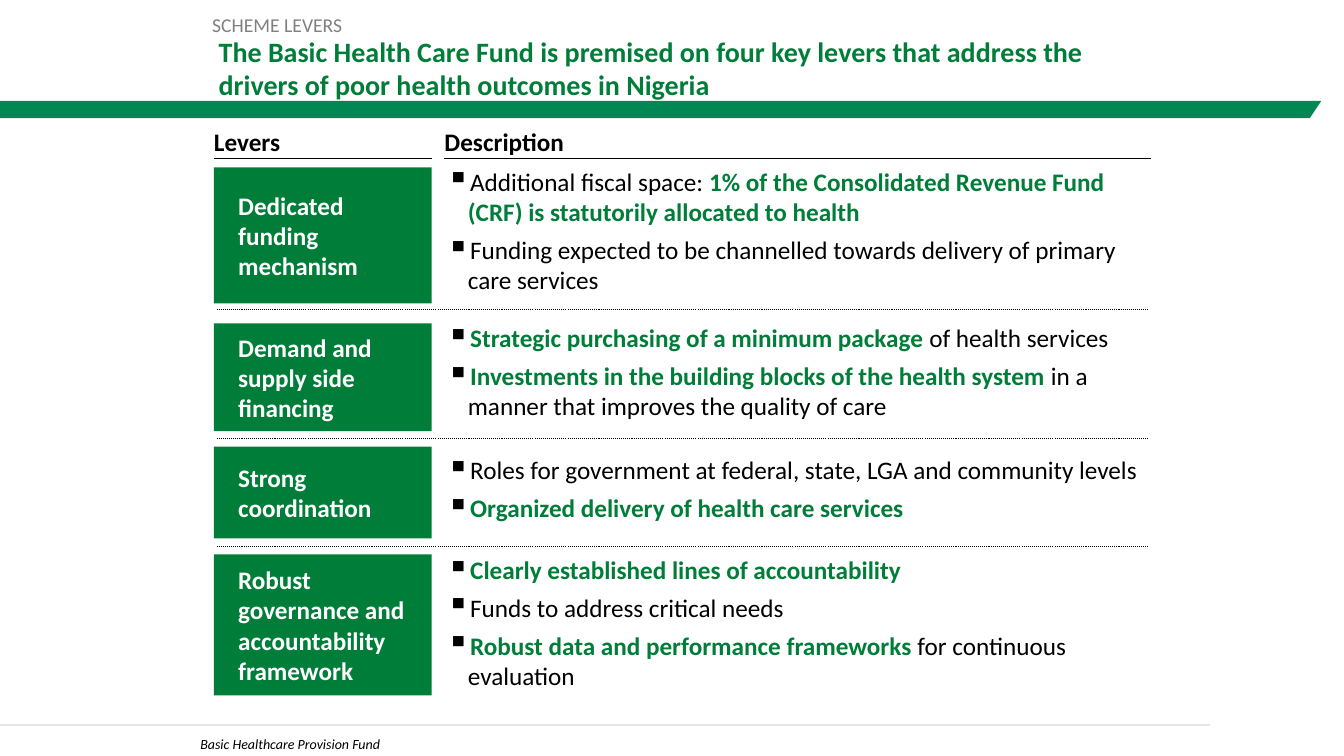
from pptx import Presentation
from pptx import util as u
from pptx.dml import color as dml_color
from pptx.enum import dml, shapes, text
from pptx.oxml import xmlchemy

Pt = u.Pt
COLORS = {
    "band": "008753",
    "green": "007E39",
    "white": "FFFFFF",
    "black": "000000",
    "grey": "808080",
    "rule": "E5E5E5",
}
FONT = "Calibri"
NO_INSETS = (0, 0, 0, 0)
LEVER_LEFT, LEVER_WIDTH = 152.8, 155.6
DESCRIPTION_LEFT, DESCRIPTION_WIDTH = 317.5, 504.5
BULLETS_LEFT, BULLETS_WIDTH = 319, 502.5

# Each lever: (top, height), label lines, (top, height) of its bullets, bullets.
# A bullet is a list of (text, is_key_message) runs.
LEVERS = [
    ((119.5, 97.2), ["Dedicated", "funding", "mechanism"], (118.8, 93.6), [
        [("Additional fiscal space: ", False),
         ("1% of the Consolidated Revenue Fund (CRF) is statutorily allocated to health", True)],
        [("Funding expected to be channelled towards delivery of primary care services", False)],
    ]),
    ((231, 77), ["Demand and", "supply side", "financing"], (230.4, 72), [
        [("Strategic purchasing of a minimum package ", True), ("of health services", False)],
        [("Investments in the building blocks of the health system ", True),
         ("in a manner that improves the quality of care", False)],
    ]),
    ((319, 65.5), ["Strong", "coordination"], (324.7, 50.4), [
        [("Roles for government at federal, state, LGA and community levels", False)],
        [("Organized delivery of health care services", True)],
    ]),
    ((396, 100.8), ["Robust", "governance and", "accountability", "framework"], (396, 100), [
        [("Clearly established lines of accountability", True)],
        [("Funds to address critical needs", False)],
        [("Robust data and performance frameworks", True), (" for continuous evaluation", False)],
    ]),
]
SEPARATOR_TOPS = [221, 313.2, 390.2]


def rgb(name):
    return dml_color.RGBColor.from_string(COLORS[name])


def apply_format(target, values):
    for name, value in values.items():
        setattr(target, name, value)


def set_frame(frame, insets, anchor, wrap=True):
    left, top, right, bottom = insets
    apply_format(frame, {
        "margin_left": Pt(left), "margin_top": Pt(top),
        "margin_right": Pt(right), "margin_bottom": Pt(bottom),
        "vertical_anchor": anchor, "word_wrap": wrap,
    })


def add_run(paragraph, words, size, color, **style):
    run = paragraph.add_run()
    run.text = words
    apply_format(run.font, {"name": FONT, "size": Pt(size), **style})
    run.font.color.rgb = rgb(color)


def set_indent(paragraph, margin, first_line=0):
    properties = paragraph._p.get_or_add_pPr()
    properties.set("marL", str(Pt(margin)))
    properties.set("indent", str(Pt(first_line)))
    return properties


def add_bullet(paragraph):
    properties = set_indent(paragraph, 15.2, -15.2)
    bullet_color = xmlchemy.OxmlElement("a:buClr")
    black = xmlchemy.OxmlElement("a:srgbClr")
    black.set("val", COLORS["black"])
    bullet_color.append(black)
    bullet_size = xmlchemy.OxmlElement("a:buSzPct")
    bullet_size.set("val", "125000")
    bullet_character = xmlchemy.OxmlElement("a:buChar")
    bullet_character.set("char", "▪")
    for element in (bullet_color, bullet_size, bullet_character):
        properties.append(element)


def next_paragraph(frame, index):
    return frame.add_paragraph() if index else frame.paragraphs[0]


def add_text(slide, box, words, size, color, insets=NO_INSETS,
             anchor=text.MSO_ANCHOR.TOP, wrap=True, margin=0, **style):
    frame = slide.shapes.add_textbox(*map(Pt, box)).text_frame
    set_frame(frame, insets, anchor, wrap)
    paragraph = frame.paragraphs[0]
    set_indent(paragraph, margin)
    add_run(paragraph, words, size, color, **style)


def add_block(slide, kind, box, color):
    shape = slide.shapes.add_shape(kind, *map(Pt, box))
    shape.shadow.inherit = False
    shape.fill.solid()
    shape.fill.fore_color.rgb = rgb(color)
    shape.line.fill.background()
    return shape


def add_rule(slide, left, right, top, color="black", width=0.75, dash=None):
    line = slide.shapes.add_connector(
        shapes.MSO_CONNECTOR.STRAIGHT, Pt(left), Pt(top), Pt(right), Pt(top))
    line.line.color.rgb = rgb(color)
    apply_format(line.line, {"width": Pt(width), "dash_style": dash})
    line._element.spPr.append(xmlchemy.OxmlElement("a:effectLst"))


def add_heading(slide, left, width, words):
    add_text(slide, (left, 97, width, 14.5), words, 18, "black",
             anchor=text.MSO_ANCHOR.BOTTOM, bold=True)
    add_rule(slide, left, left + width, 113)


def add_lever(slide, top, height, lines):
    box = (LEVER_LEFT, top, LEVER_WIDTH, height)
    frame = add_block(slide, shapes.MSO_SHAPE.RECTANGLE, box, "green").text_frame
    set_frame(frame, (5.8,) * 4, text.MSO_ANCHOR.MIDDLE)
    for index, words in enumerate(lines):
        paragraph = next_paragraph(frame, index)
        paragraph.alignment = text.PP_ALIGN.LEFT
        set_indent(paragraph, 11.5)
        add_run(paragraph, words, 18, "white", bold=True)


def add_bullets(slide, top, height, bullets):
    box = (BULLETS_LEFT, top, BULLETS_WIDTH, height)
    frame = slide.shapes.add_textbox(*map(Pt, box)).text_frame
    set_frame(frame, NO_INSETS, text.MSO_ANCHOR.TOP)
    for index, runs in enumerate(bullets):
        paragraph = next_paragraph(frame, index)
        add_bullet(paragraph)
        if index:
            paragraph.space_before = Pt(5.4)
        for words, is_key in runs:
            add_run(paragraph, words, 18, "green" if is_key else "black", bold=is_key)


def main():
    presentation = Presentation()
    presentation.slide_width, presentation.slide_height = Pt(960), Pt(540)
    slide = presentation.slides.add_slide(presentation.slide_layouts[6])

    # Header band with a slanted end, and the footer
    add_block(slide, shapes.MSO_SHAPE.RECTANGLE, (0, 72, 944, 12.4), "band")
    add_block(slide, shapes.MSO_SHAPE.ISOSCELES_TRIANGLE, (934, 72, 20, 15), "white")
    add_rule(slide, 0, 864, 517.8, "rule", 1)
    add_text(slide, (136, 521.5, 624, 17), "Basic Healthcare Provision Fund", 10, "black",
             insets=(7.2, 3.6, 7.2, 3.6), italic=True)

    # Title
    add_text(slide, (139.7, 21, 697, 55.4),
             "The Basic Health Care Fund is premised on four key levers that address the "
             "drivers of poor health outcomes in Nigeria",
             20, "green", insets=(7.2, 3.6, 7.2, 3.6), margin=9.4, bold=True)
    add_text(slide, (151.5, 9.5, 96, 17), "SCHEME LEVERS", 14, "grey", wrap=False)

    # Column headings
    add_heading(slide, LEVER_LEFT, LEVER_WIDTH, "Levers")
    add_heading(slide, DESCRIPTION_LEFT, DESCRIPTION_WIDTH, "Description")

    # Levers and their descriptions
    for lever_span, lines, bullet_span, bullets in LEVERS:
        add_lever(slide, *lever_span, lines)
        add_bullets(slide, *bullet_span, bullets)
    for top in SEPARATOR_TOPS:
        add_rule(slide, 154.8, 820, top, dash=dml.MSO_LINE.ROUND_DOT)

    presentation.save("out.pptx")


if __name__ == "__main__":
    main()
